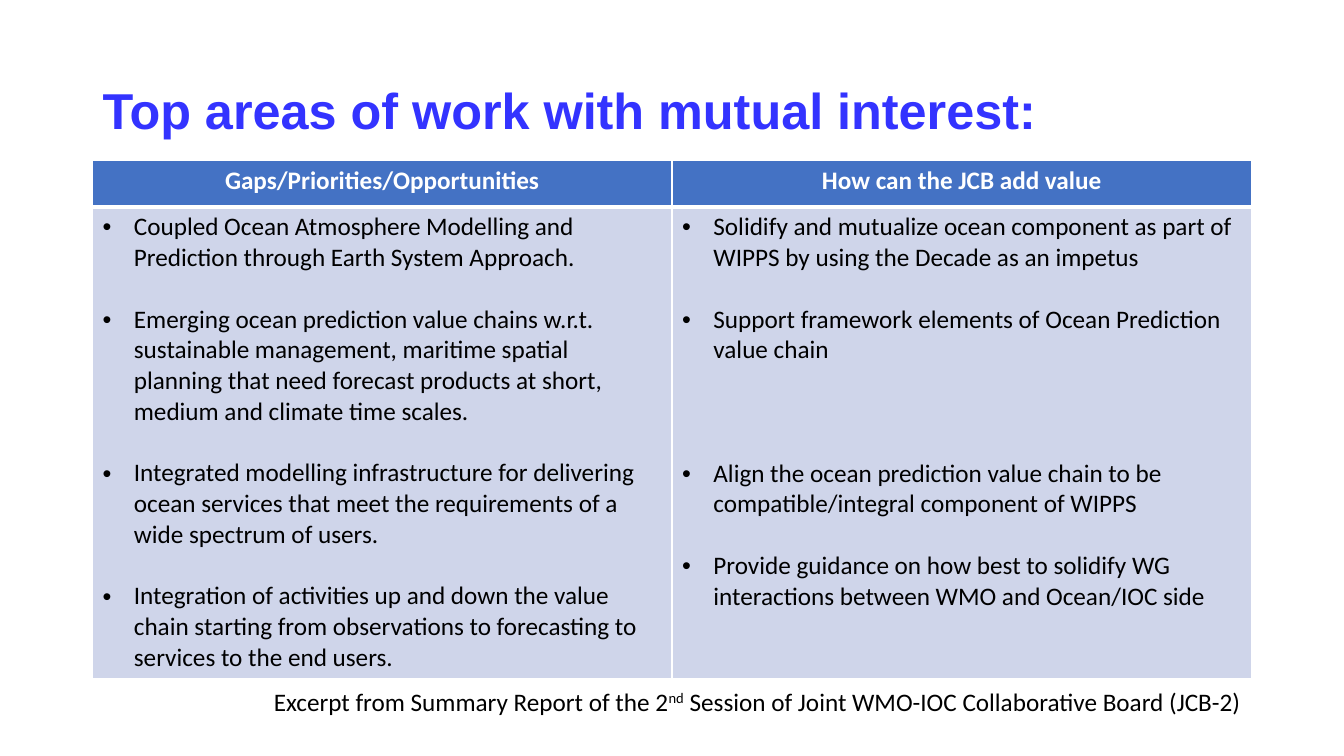
from dataclasses import dataclass

from lxml.etree import SubElement
from pptx import Presentation
from pptx.dml.color import RGBColor
from pptx.enum.text import MSO_ANCHOR, MSO_AUTO_SIZE, PP_ALIGN
from pptx.oxml.ns import qn
from pptx.util import Cm, Pt


@dataclass(frozen=True)
class Theme:
    title_font: str = "Arial"
    body_font: str = "Calibri"
    title_size: int = 36
    body_size: int = 18
    blank_line: int = 22
    title: str = "3333FF"
    text: str = "000000"
    white: str = "FFFFFF"
    header: str = "4472C4"
    body: str = "CFD5EA"


THEME = Theme()

HEADERS = ["Gaps/Priorities/Opportunities", "How can the JCB add value"]

# Each bullet is paired with the number of line heights left free above it.
COLUMNS = [
    [
        (0, "Coupled Ocean Atmosphere Modelling and Prediction through Earth "
            "System Approach."),
        (1, "Emerging ocean prediction value chains w.r.t. sustainable "
            "management, maritime spatial planning that need forecast products "
            "at short, medium and climate time scales."),
        (1, "Integrated modelling infrastructure for delivering ocean services "
            "that meet the requirements of a wide spectrum of users."),
        (1, "Integration of activities up and down the value chain starting "
            "from observations to forecasting to services to the end users."),
    ],
    [
        (0, "Solidify and mutualize ocean component as part of WIPPS by using "
            "the Decade as an impetus"),
        (1, "Support framework elements of Ocean Prediction value chain"),
        (3, "Align the ocean prediction value chain to be compatible/integral "
            "component of WIPPS"),
        (1, "Provide guidance on how best to solidify WG interactions "
            "between WMO and Ocean/IOC side"),
    ],
]


def add_run(p, text, color, size=THEME.body_size, font=THEME.body_font, bold=False):
    r = p.add_run()
    r.text = text
    r.font.name = font
    r.font.size = Pt(size)
    r.font.bold = bold
    r.font.color.rgb = RGBColor.from_string(color)
    return r


def add_bullet(p):
    pPr = p._p.get_or_add_pPr()
    pPr.set("marL", str(Cm(0.79)))
    pPr.set("indent", str(-Cm(0.79)))
    SubElement(pPr, qn("a:buFont"), typeface="Arial")
    SubElement(pPr, qn("a:buChar"), char="•")


def style_cell(cell, fill, top=1, bottom=1):
    """Give the cell white borders, with widths in points, and a solid fill."""
    tcPr = cell._tc.get_or_add_tcPr()
    for side, width in (("L", 1), ("R", 1), ("T", top), ("B", bottom)):
        ln = SubElement(tcPr, qn(f"a:ln{side}"), w=str(Pt(width)))
        SubElement(SubElement(ln, qn("a:solidFill")), qn("a:srgbClr"), val=THEME.white)
    cell.fill.solid()
    cell.fill.fore_color.rgb = RGBColor.from_string(fill)


def place_title(s, left, top, width, height):
    sp = s.shapes.title
    sp.left, sp.top, sp.width, sp.height = left, top, width, height
    tf = sp.text_frame
    tf.word_wrap = True
    tf.auto_size = MSO_AUTO_SIZE.NONE
    tf.vertical_anchor = MSO_ANCHOR.MIDDLE
    p = tf.paragraphs[0]
    p.alignment = PP_ALIGN.LEFT
    p.line_spacing = 0.9
    add_run(p, "Top areas of work with mutual interest:", THEME.title,
            THEME.title_size, THEME.title_font, bold=True)


def add_interest_table(s, left, top, width, height):
    table = s.shapes.add_table(2, len(COLUMNS), left, top, width, height).table
    header_height = Cm(1.17)
    table.rows[0].height = header_height
    table.rows[1].height = height - header_height
    for i, (heading, bullets) in enumerate(zip(HEADERS, COLUMNS)):
        head, body = table.cell(0, i), table.cell(1, i)
        style_cell(head, THEME.header, bottom=3)
        p = head.text_frame.paragraphs[0]
        p.alignment = PP_ALIGN.CENTER
        add_run(p, heading, THEME.white, bold=True)

        style_cell(body, THEME.body, top=3)
        tf = body.text_frame
        for j, (gap, text) in enumerate(bullets):
            p = tf.add_paragraph() if j else tf.paragraphs[0]
            add_bullet(p)
            if gap:
                p.space_before = Pt(gap * THEME.blank_line)
            add_run(p, text, THEME.text)


def add_source_line(s, left, top, width, height):
    tf = s.shapes.add_textbox(left, top, width, height).text_frame
    tf.word_wrap = False
    tf.auto_size = MSO_AUTO_SIZE.SHAPE_TO_FIT_TEXT
    p = tf.paragraphs[0]
    add_run(p, "Excerpt from Summary Report of the 2", THEME.text)
    ordinal = add_run(p, "nd", THEME.text)
    ordinal._r.get_or_add_rPr().set("baseline", "30000")
    add_run(p, " Session of Joint WMO-IOC Collaborative Board (JCB-2)", THEME.text)


def main():
    prs = Presentation()
    prs.slide_width, prs.slide_height = Cm(33.87), Cm(19.05)
    s = prs.slides.add_slide(prs.slide_layouts[5])
    left, width = Cm(2.33), Cm(29.21)
    place_title(s, left, Cm(1.01), width, Cm(3.68))
    add_interest_table(s, left, Cm(4.04), width, Cm(12.85))
    add_source_line(s, Cm(6.65), Cm(17.17), Cm(25.35), Cm(1.03))
    prs.save("out.pptx")


if __name__ == "__main__":
    main()
